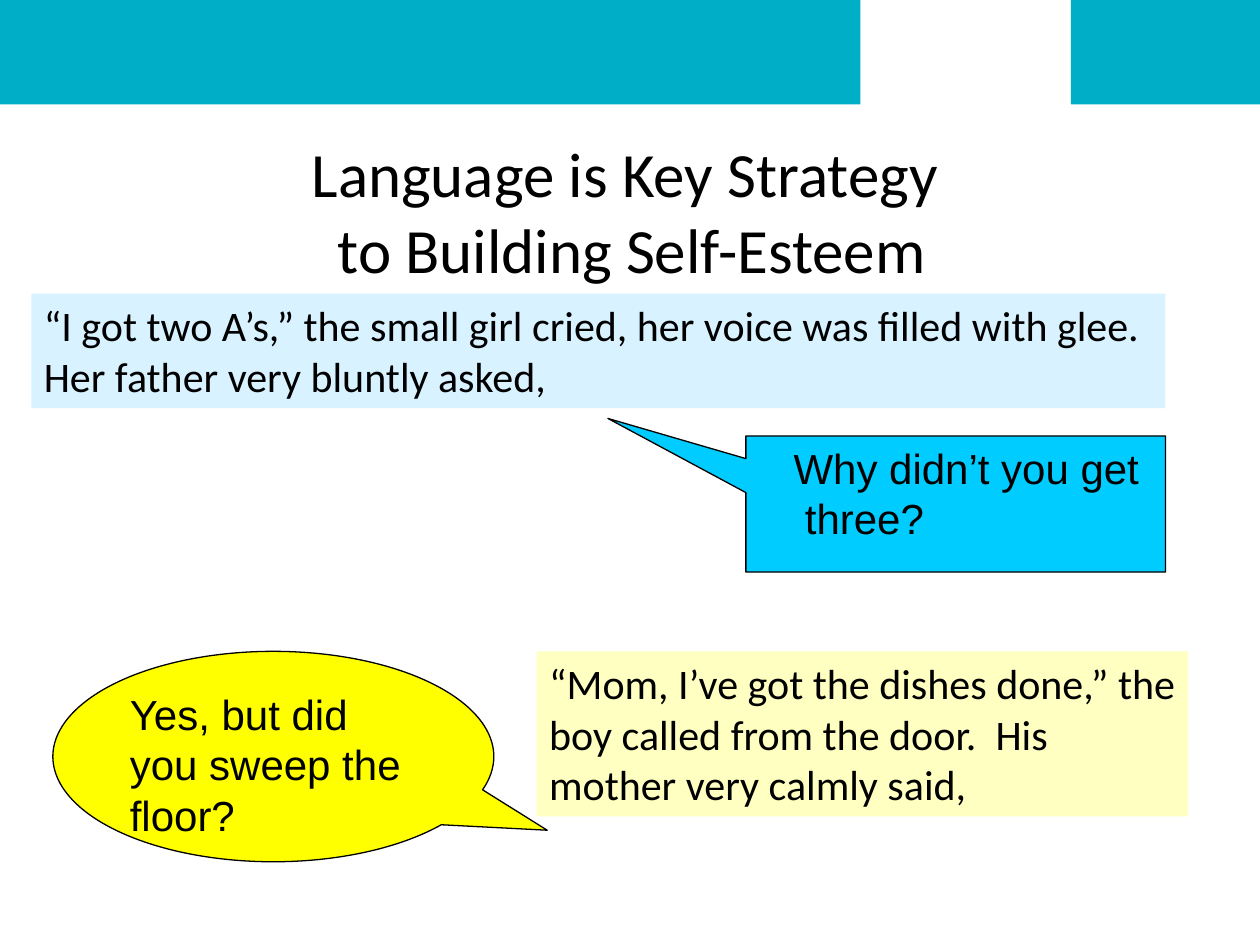
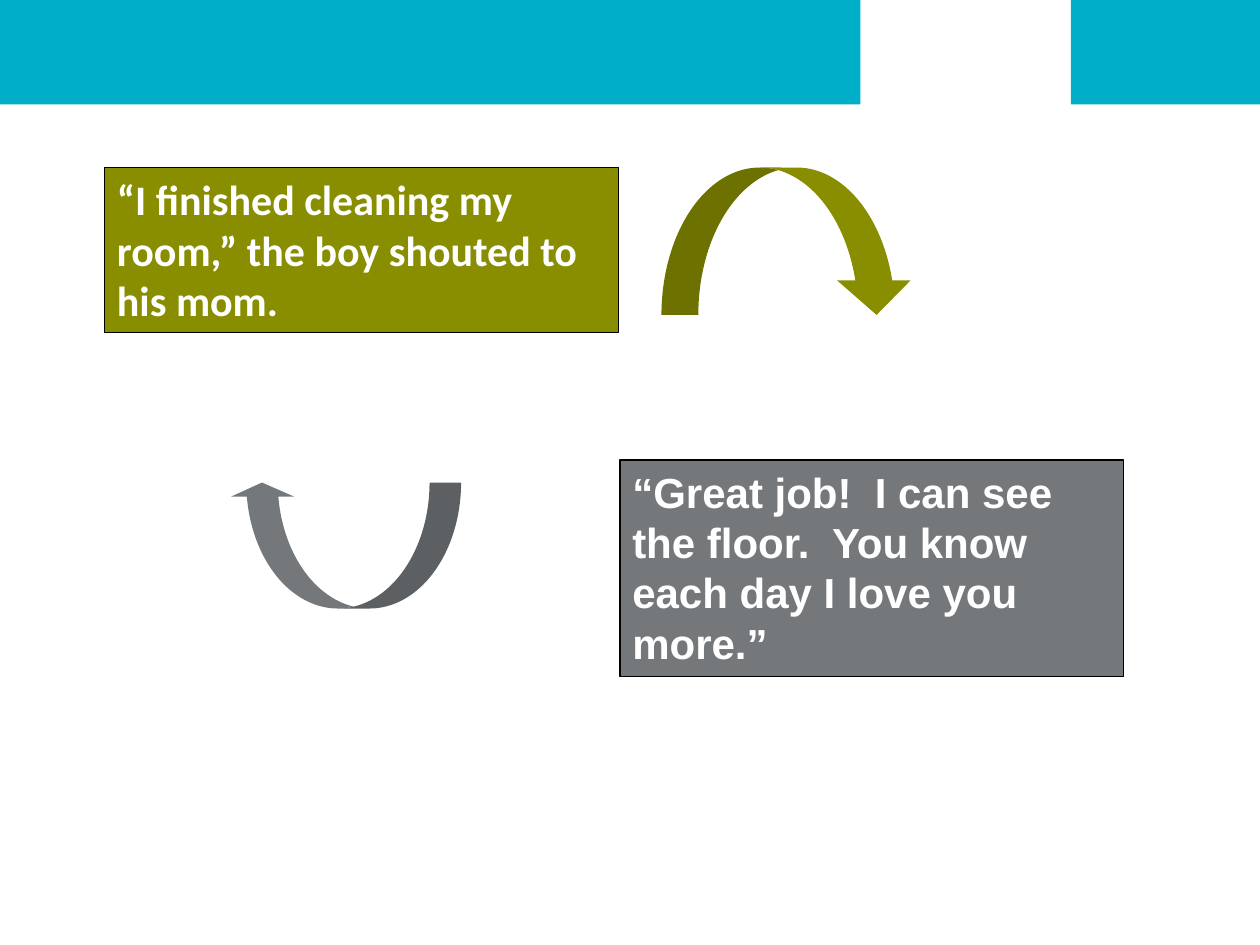
from lxml.etree import SubElement
from pptx import Presentation
from pptx.dml.color import RGBColor
from pptx.enum.shapes import MSO_SHAPE as SHAPE
from pptx.enum.text import MSO_ANCHOR as ANCHOR, PP_ALIGN as ALIGN
from pptx.oxml.ns import qn
from pptx.util import Inches, Pt

# Shared colours
rgb = RGBColor.from_string
TEAL, OLIVE, GRAY = "00AEC7", "888E00", "75787B"
BLACK, WHITE = "000000", "FFFFFF"


def add_shape(s, kind, box, fill, line=None, alpha=None, adj=()):
    sp = s.shapes.add_shape(kind, *map(Inches, box))
    sp.shadow.inherit = False
    sp.fill.solid()
    sp.fill.fore_color.rgb = rgb(fill)
    if alpha:
        clr = sp._element.spPr.find(qn("a:solidFill"))[0]
        SubElement(clr, qn("a:alpha"), val=str(alpha * 1000))
    if line:
        sp.line.color.rgb = rgb(line)
        sp.line.width = Pt(0.75)
    else:
        sp.line.fill.background()
    for i, value in enumerate(adj):
        sp.adjustments[i] = value
    return sp


def add_text(sp, text, font="Calibri", size=24, color=BLACK, bold=False,
             align=ALIGN.LEFT, indents=()):
    tf = sp.text_frame
    tf.word_wrap = True
    tf.vertical_anchor = ANCHOR.TOP
    tf.text = text
    for p in tf.paragraphs:
        p.alignment = align
        f = p.runs[0].font
        f.name, f.size, f.bold = font, Pt(size), bold
        f.color.rgb = rgb(color)
    for p, indent in zip(tf.paragraphs, indents):
        p._p.get_or_add_pPr().set("marL", str(Inches(indent)))


prs = Presentation()
prs.slide_width, prs.slide_height = Inches(10), Inches(7.5)

# Both slides carry the split top band
slides = []
for _ in range(2):
    s = prs.slides.add_slide(prs.slide_layouts[6])
    for left, width in ((0, 6.83), (8.5, 1.5)):
        add_shape(s, SHAPE.RECTANGLE, (left, 0, width, 0.83), TEAL)
    slides.append(s)
esteem, praise = slides

# Slide 1: spoken replies in callouts
father = add_shape(esteem, SHAPE.RECTANGULAR_CALLOUT, (5.92, 3.46, 3.33, 1.08),
                   "00CCFF", BLACK, adj=(-0.829, -0.629))
add_text(father, "Why didn’t you get\nthree?", font="Arial", indents=(0.28, 0.37))

mother = add_shape(esteem, SHAPE.OVAL_CALLOUT, (0.42, 5.17, 3.5, 1.67),
                   "FFFF00", BLACK, adj=(0.621, 0.35))
add_text(mother, "Yes, but did you sweep the floor?", font="Arial")

# Slide 1: title
title = esteem.shapes.add_textbox(*map(Inches, (0.6, 1.02, 8.83, 1.31)))
add_text(title, "Language is Key Strategy \nto Building Self-Esteem",
         size=36, align=ALIGN.CENTER)

# Slide 1: stories on tinted panels
for box, fill, alpha, text in (
    ((0.25, 2.33, 9, 0.91), "66CCFF", 25,
     "“I got two A’s,” the small girl cried, her voice was filled with glee.  "
     "Her father very bluntly asked,"),
    ((4.26, 5.17, 5.17, 1.31), "FFFF66", 40,
     "“Mom, I’ve got the dishes done,” the boy called from the door.  "
     "His mother very calmly said,"),
):
    add_text(add_shape(esteem, SHAPE.RECTANGLE, box, fill, alpha=alpha), text)

# Slide 2: the exchange
for box, fill, font, text in (
    ((4.92, 3.65, 4, 1.72), GRAY, "Arial",
     "“Great job!  I can see the floor.  You know each day I love you more.”"),
    ((0.83, 1.33, 4.08, 1.31), OLIVE, "Calibri",
     "“I finished cleaning my room,” the boy shouted to his mom."),
):
    sp = add_shape(praise, SHAPE.RECTANGLE, box, fill, BLACK)
    add_text(sp, text, font=font, color=WHITE, bold=True)

# Slide 2: arrows from one speaker to the other and back
add_shape(praise, SHAPE.CURVED_DOWN_ARROW, (5.25, 1.33, 2, 1.17), OLIVE,
          adj=(0.25, 0.5, 0.235))
back = add_shape(praise, SHAPE.CURVED_UP_ARROW, (1.83, 3.83, 1.83, 1), GRAY,
                 adj=(0.25, 0.5, 0.112))
back._element.spPr.find(qn("a:xfrm")).set("flipH", "1")

prs.save("out.pptx")
